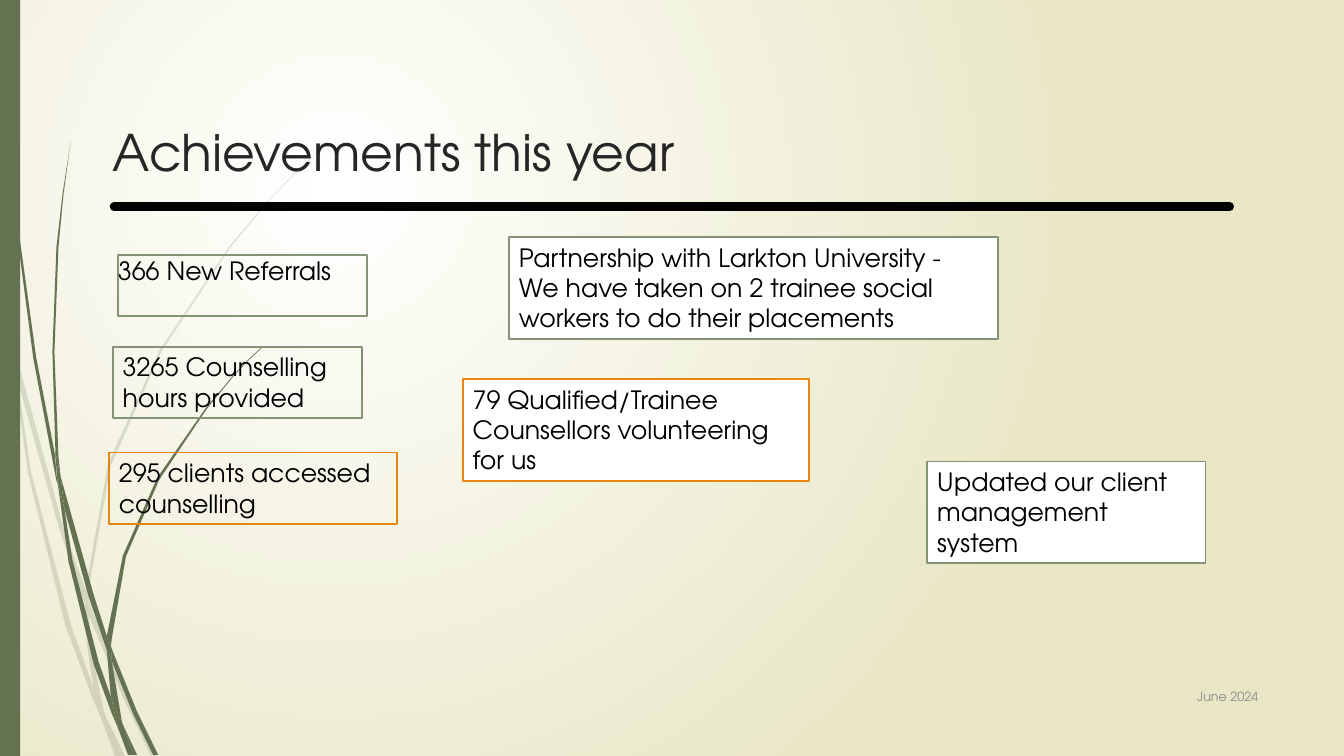
from dataclasses import dataclass

from lxml import etree
from pptx import Presentation
from pptx.dml.color import RGBColor
from pptx.enum import shapes, text
from pptx.oxml import ns
from pptx.util import Pt


@dataclass(frozen=True)
class Theme:
    font: str = "TeX Gyre Adventor"
    white: str = "FFFFFF"
    sand: str = "E8E6C4"
    black: str = "000000"
    heading: str = "262626"
    muted: str = "8C8C8C"
    moss: str = "647252"
    sage: str = "849276"
    orange: str = "E78712"
    title_size: int = 36
    body_size: int = 18
    footer_size: int = 9


THEME = Theme()
GRASS_UNIT = Pt(0.72)

PALE_GRASS = [
    [(58, 522), (84, 599), (85, 586), (62, 520), (14, 345), (17, 376)],
    [(92, 607), (88, 596), (88, 610), (123, 694), (150, 750), (155, 750), (127, 692)],
    [(119, 750), (124, 750), (105, 711)],
    [(93, 683), (70, 619), (31, 469), (17, 376), (11, 350), (28, 470), (65, 621),
     (92, 693), (101, 714), (99, 707)],
    [(84, 599), (87, 646), (93, 683), (96, 692), (105, 711), (103, 706), (91, 646),
     (88, 610), (88, 608)],
    [(88, 584), (110, 462), (160, 349), (229, 245), (268, 198), (290, 175), (312, 154),
     (312, 153), (289, 175), (268, 197), (228, 244), (158, 348), (107, 461), (85, 584),
     (85, 586), (88, 596)],
    [(101, 714), (114, 750), (119, 750)],
    [(88, 608), (88, 610), (88, 596), (85, 586), (84, 599)],
    [(96, 692), (93, 683), (99, 707), (101, 714), (119, 750), (105, 711)],
]
DARK_GRASS = [
    [(7, 110), (17, 233), (33, 355), (56, 477), (57, 481), (55, 457), (55, 453),
     (36, 355), (19, 232), (8, 109), (5, 48), (4, 0), (3, 0), (4, 48)],
    [(88, 592), (106, 645), (106, 633), (106, 631), (93, 590), (60, 472), (64, 505)],
    [(113, 649), (110, 641), (111, 656), (132, 708), (152, 749), (157, 749), (136, 706)],
    [(110, 691), (98, 657), (72, 556), (64, 505), (57, 477), (68, 557), (93, 659),
     (111, 708), (117, 722), (116, 717)],
    [(60, 472), (58, 453), (54, 349), (58, 245), (63, 193), (70, 141), (62, 193),
     (56, 245), (52, 349), (55, 449)],
    [(133, 749), (136, 749), (122, 719)],
    [(57, 477), (64, 505), (60, 472), (55, 449), (55, 453)],
    [(111, 633), (125, 552), (158, 476), (205, 406), (231, 374), (245, 359), (261, 344),
     (260, 344), (245, 358), (231, 373), (204, 405), (156, 474), (122, 551), (106, 631),
     (110, 641)],
    [(117, 722), (127, 749), (131, 749)],
    [(106, 645), (110, 691), (116, 706), (122, 719), (121, 716), (111, 656), (109, 651)],
    [(106, 645), (109, 651), (111, 656), (110, 641), (106, 631), (106, 633)],
    [(116, 706), (110, 691), (116, 717), (117, 722), (130, 749), (133, 749), (122, 719)],
]

ACHIEVEMENTS = [
    ("3265 Counselling hours provided", (80.6, 247.7, 177.8, 51.1), THEME.sage, None),
    ("295 clients accessed counselling", (77.8, 323.3, 205.9, 51.1), THEME.orange, None),
    ("Partnership with Larkton University - We have taken on 2 trainee social "
     "workers to do their placements", (363.6, 169.2, 349.2, 72.7), THEME.sage, THEME.white),
    ("79 Qualified/Trainee Counsellors volunteering for us",
     (330.5, 270.7, 247.7, 72.7), THEME.orange, THEME.white),
    ("Updated our client management system",
     (662.4, 329.6, 198.7, 72.7), THEME.sage, THEME.white),
]


def rgb(colour):
    return RGBColor.from_string(colour)


def set_background(slide):
    fill = slide.background.fill
    fill.gradient()
    for stop, colour in zip(fill.gradient_stops, (THEME.white, THEME.sand)):
        stop.color.rgb = rgb(colour)
    gradient = slide.element.find(".//" + ns.qn("a:gradFill"))
    gradient.remove(gradient.find(ns.qn("a:lin")))
    radial = etree.SubElement(gradient, ns.qn("a:path"), path="circle")
    etree.SubElement(radial, ns.qn("a:fillToRect"), l="50000", t="50000", r="100000", b="100000")


def add_grass(slide, outline, opacity=None):
    builder = slide.shapes.build_freeform(*outline[0], scale=GRASS_UNIT)
    builder.add_line_segments(outline[1:], close=True)
    shape = builder.convert_to_shape()
    paint(shape, THEME.moss)
    if opacity:
        colour = shape.element.spPr.find(".//" + ns.qn("a:srgbClr"))
        etree.SubElement(colour, ns.qn("a:alpha"), val=str(opacity * 1000))


def paint(shape, fill=None, line=None):
    shape.shadow.inherit = False
    if fill:
        shape.fill.solid()
        shape.fill.fore_color.rgb = rgb(fill)
    else:
        shape.fill.background()
    if line:
        shape.line.color.rgb = rgb(line)
        shape.line.width = Pt(1.25)
    else:
        shape.line.fill.background()


def write(shape, words, size, colour, align=text.PP_ALIGN.LEFT,
          anchor=text.MSO_ANCHOR.TOP, insets=(0, 0)):
    frame = shape.text_frame
    frame.word_wrap = True
    frame.auto_size = text.MSO_AUTO_SIZE.NONE
    frame.vertical_anchor = anchor
    frame.margin_left = frame.margin_right = Pt(insets[0])
    frame.margin_top = frame.margin_bottom = Pt(insets[1])
    paragraph = frame.paragraphs[0]
    paragraph.alignment = align
    run = paragraph.add_run()
    run.text = words
    run.font.name = THEME.font
    run.font.size = Pt(size)
    run.font.color.rgb = rgb(colour)


def add_rectangle(slide, box, fill=None, line=None):
    shape = slide.shapes.add_shape(shapes.MSO_SHAPE.RECTANGLE, *map(Pt, box))
    paint(shape, fill, line)
    return shape


def add_date(slide, words, box):
    date = slide.shapes.add_textbox(*map(Pt, box))
    write(date, words, THEME.footer_size, THEME.muted, text.PP_ALIGN.RIGHT,
          text.MSO_ANCHOR.MIDDLE, (7.2, 3.6))


def add_rule(slide, left, right, y):
    rule = slide.shapes.add_connector(
        shapes.MSO_CONNECTOR.STRAIGHT, Pt(left), Pt(y), Pt(right), Pt(y))
    rule.line.color.rgb = rgb(THEME.black)
    rule.line.width = Pt(6)
    properties = rule.element.spPr
    properties.find(ns.qn("a:ln")).set("cap", "rnd")
    etree.SubElement(properties, ns.qn("a:effectLst"))


def set_title(slide, words, box):
    title = slide.shapes.title
    title.left, title.top, title.width, title.height = map(Pt, box)
    write(title, words, THEME.title_size, THEME.heading, anchor=text.MSO_ANCHOR.BOTTOM)


def main():
    presentation = Presentation()
    presentation.slide_width, presentation.slide_height = Pt(960), Pt(540)
    slide = presentation.slides.add_slide(presentation.slide_layouts[5])
    set_background(slide)
    for outline in PALE_GRASS:
        add_grass(slide, outline, opacity=20)
    for outline in DARK_GRASS:
        add_grass(slide, outline)
    add_rectangle(slide, (0, 0, 14.4, 540), fill=THEME.moss)
    add_rule(slide, 81.4, 878.4, 147.6)
    set_title(slide, "Achievements this year", (80.6, 78.5, 614.9, 51.1))
    add_date(slide, "June 2024", (815.8, 482.4, 90, 29.5))
    referrals = add_rectangle(slide, (84.2, 182.4, 177.8, 43.5), line=THEME.sage)
    write(referrals, "366 New Referrals", THEME.body_size, THEME.black)
    for words, box, line, fill in ACHIEVEMENTS:
        card = add_rectangle(slide, box, fill, line)
        write(card, words, THEME.body_size, THEME.black, insets=(7.2, 3.6))
    presentation.save("out.pptx")


if __name__ == "__main__":
    main()
